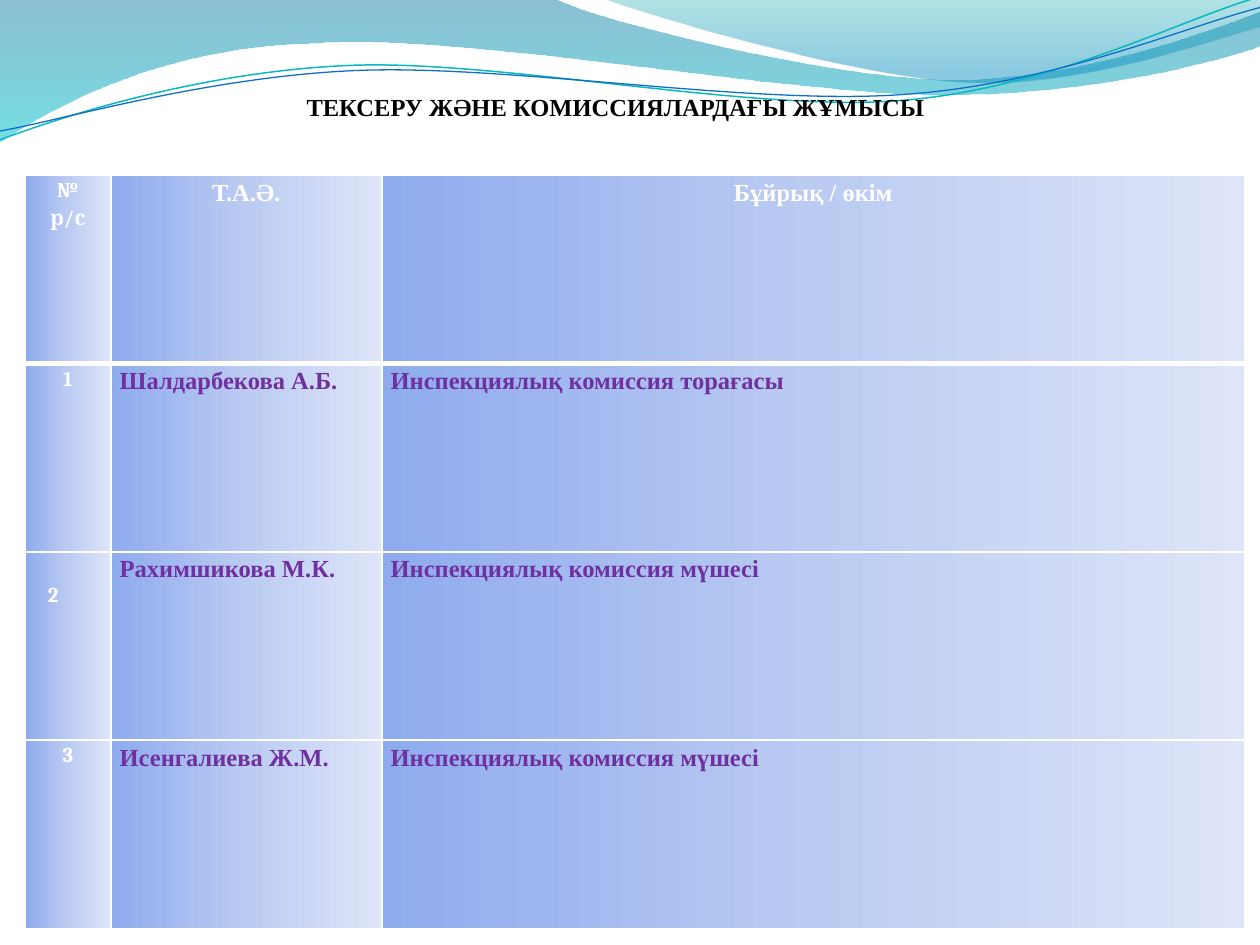
import pptx
import pptx.util
import pptx.dml.color
import pptx.enum.text
import pptx.oxml
import pptx.oxml.ns
import lxml.etree
from pptx.util import Inches

COLORS = {
    "white": "FFFFFF", "black": "000000", "name": "7030A0",
    "teal_line": "0AB8BF", "blue_line": "0F6FC6",
    "wave_top": "0074A1", "wave_bottom": "00C6CF",
    "crest_top": "00A1A9", "crest_bottom": "008BBF",
    "cell_left": "8EABEE", "cell_mid": "BBCBF2", "cell_right": "DEE5F8",
}
SERIF, CAMBRIA = "Times New Roman", "Cambria"
ALIGN = pptx.enum.text.PP_ALIGN
ANCHOR = pptx.enum.text.MSO_ANCHOR
qn = pptx.oxml.ns.qn

# Each outline is a start point and segments: 2 numbers are a line, 6 a Bezier curve.
WAVE = [(0, 0), (4.4, -0.01), (4.76, 0.17, 6.64, 0.63, 7.58, 0.63),
        (8.53, 0.63, 9.58, 0.26, 10, 0.09), (10.01, 0.36),
        (9.83, 0.44, 8.7, 0.76, 7.46, 0.75), (6.22, 0.75, 3.82, 0.28, 2.57, 0.34),
        (1.29, 0.36, 0.46, 0.83, -0.01, 1.13)]
CREST = [(4.79, -0.01), (5.09, 0.11, 6.82, 0.62, 7.69, 0.65),
         (8.56, 0.69, 9.61, 0.32, 10, 0.21), (10, 0)]
TEAL_CURVE = [(0, 1.11), (0.48, 0.93, 1.58, 0.57, 2.77, 0.52),
              (3.95, 0.47, 5.93, 0.89, 7.13, 0.8), (8.33, 0.71, 9.38, 0.15, 9.98, -0.02)]
BLUE_CURVE = [(0, 1.04), (0.47, 0.96, 1.64, 0.61, 2.83, 0.56),
              (4.03, 0.51, 5.97, 0.84, 7.17, 0.75), (8.36, 0.67, 9.41, 0.21, 10, 0.06)]

HEADER = ["№\nр/с", "Т.А.Ә.", "Бұйрық / өкім"]
MEMBERS = [
    ("1", "Шалдарбекова А.Б.", "Инспекциялық комиссия торағасы"),
    ("2", "Рахимшикова М.К.", "Инспекциялық комиссия мүшесі"),
    ("3", "Исенгалиева Ж.М.", "Инспекциялық комиссия мүшесі"),
]


def rgb(name):
    return pptx.dml.color.RGBColor.from_string(COLORS[name])


def gradient(stops, angle):
    """Make a gradFill from (position %, colour name, opacity %) stops."""
    gs = "".join(
        f'<a:gs pos="{pos * 1000}"><a:srgbClr val="{COLORS[name]}">'
        f'<a:alpha val="{alpha * 1000}"/></a:srgbClr></a:gs>'
        for pos, name, alpha in stops)
    return pptx.oxml.parse_xml(
        f'<a:gradFill {pptx.oxml.ns.nsdecls("a")} rotWithShape="1"><a:gsLst>{gs}</a:gsLst>'
        f'<a:lin ang="{angle * 60000}" scaled="0"/></a:gradFill>')


def add_outline(s, left, top, outline, close):
    """Build a freeform, joining the three points of each curve into one Bezier."""
    points = [(left + Inches(x), top + Inches(y))
              for seg in outline for x, y in zip(seg[::2], seg[1::2])]
    builder = s.shapes.build_freeform(*points[0])
    builder.add_line_segments(points[1:], close=close)
    sp = builder.convert_to_shape()
    lines = iter(list(sp.element.iter(qn("a:lnTo"))))
    for seg in outline[1:]:
        first = next(lines)
        if len(seg) == 2:
            continue
        curve = lxml.etree.Element(qn("a:cubicBezTo"))
        first.addprevious(curve)
        for line in (first, next(lines), next(lines)):
            curve.append(line[0])
            line.getparent().remove(line)
    sp.shadow.inherit = False
    sp.fill.background()
    sp.line.fill.background()
    return sp


def add_waves(s, left, top):
    areas = [(WAVE, [(0, "wave_top", 45), (100, "wave_bottom", 55)]),
             (CREST, [(0, "crest_top", 30), (80, "crest_bottom", 45)])]
    for outline, stops in areas:
        sp = add_outline(s, left, top, outline, True)
        sp_pr = sp.element.spPr
        sp_pr.replace(sp_pr.find(qn("a:noFill")), gradient(stops, 90))
    for outline, color, width in [(TEAL_CURVE, "teal_line", 0.85),
                                  (BLUE_CURVE, "blue_line", 0.75)]:
        sp = add_outline(s, left, top, outline, False)
        sp.line.color.rgb = rgb(color)
        sp.line.width = pptx.util.Pt(width)


def add_run(p, text, size, font, color):
    r = p.add_run()
    r.text = text
    r.font.size = pptx.util.Pt(size)
    r.font.name = font
    r.font.bold = True
    r.font.color.rgb = rgb(color)


def set_title(s, left, top, width, height, text):
    title = s.shapes.title
    title.left, title.top, title.width, title.height = left, top, width, height
    tf = title.text_frame
    tf.word_wrap = True
    tf.auto_size = pptx.enum.text.MSO_AUTO_SIZE.NONE
    tf.vertical_anchor = ANCHOR.MIDDLE
    p = tf.paragraphs[0]
    p.alignment = ALIGN.CENTER
    add_run(p, text, 14, SERIF, "black")
    s.shapes.element.append(title.element)  # in front of the waves


def paint_cell(cell, top_pt, bottom_pt):
    """Give a cell its white borders and gradient."""
    tc_pr = cell._tc.get_or_add_tcPr()
    for side, width in [("L", 1), ("R", 1), ("T", top_pt), ("B", bottom_pt)]:
        tc_pr.append(pptx.oxml.parse_xml(
            f'<a:ln{side} {pptx.oxml.ns.nsdecls("a")} w="{width * 12700}"><a:solidFill>'
            f'<a:srgbClr val="{COLORS["white"]}"/></a:solidFill></a:ln{side}>'))
    tc_pr.append(gradient([(0, "cell_left", 100), (50, "cell_mid", 100),
                           (100, "cell_right", 100)], 0))


def fill_cell(cell, text, align, size, font, color):
    cell.margin_left = cell.margin_right = Inches(0.07)
    cell.margin_top = cell.margin_bottom = 0
    cell.vertical_anchor = ANCHOR.TOP
    tf = cell.text_frame
    for i, line in enumerate(text.split("\n")):
        p = tf.add_paragraph() if i else tf.paragraphs[0]
        p.alignment = align
        p.line_spacing = 1.15
        add_run(p, line, size, font, color)


def add_members_table(s, left, top, width, height):
    rows = [HEADER, *MEMBERS]
    table = s.shapes.add_table(len(rows), len(HEADER), left, top, width, height).table
    table.horz_banding = False
    for column, col_width in zip(table.columns, (0.68, 2.15, 6.85)):
        column.width = Inches(col_width)
    body_align = (ALIGN.CENTER, ALIGN.LEFT, ALIGN.JUSTIFY)
    for i, row in enumerate(rows):
        for j, text in enumerate(row):
            cell = table.cell(i, j)
            size, font = (14, SERIF) if j else (12, CAMBRIA)
            color = "name" if i and j else "white"
            align = body_align[j] if i else ALIGN.CENTER
            fill_cell(cell, text, align, size, font, color)
            paint_cell(cell, 3 if i == 1 else 1, 3 if i == 0 else 1)
    # The second number sits one line lower, at the left
    number = table.cell(2, 0)
    number.margin_top = Inches(0.22)
    number.margin_left = Inches(0.18)
    number.text_frame.paragraphs[0].alignment = ALIGN.LEFT


def main():
    prs = pptx.Presentation()
    prs.slide_width, prs.slide_height = Inches(10), Inches(7.5)
    s = prs.slides.add_slide(prs.slide_layouts[5])
    add_waves(s, 0, 0)
    set_title(s, Inches(1.3), Inches(0.68), Inches(7.17), Inches(0.34),
              "ТЕКСЕРУ ЖӘНЕ КОМИССИЯЛАРДАҒЫ ЖҰМЫСЫ")
    add_members_table(s, Inches(0.2), Inches(1.39), Inches(9.68), Inches(5.98))
    prs.save("out.pptx")


if __name__ == "__main__":
    main()
